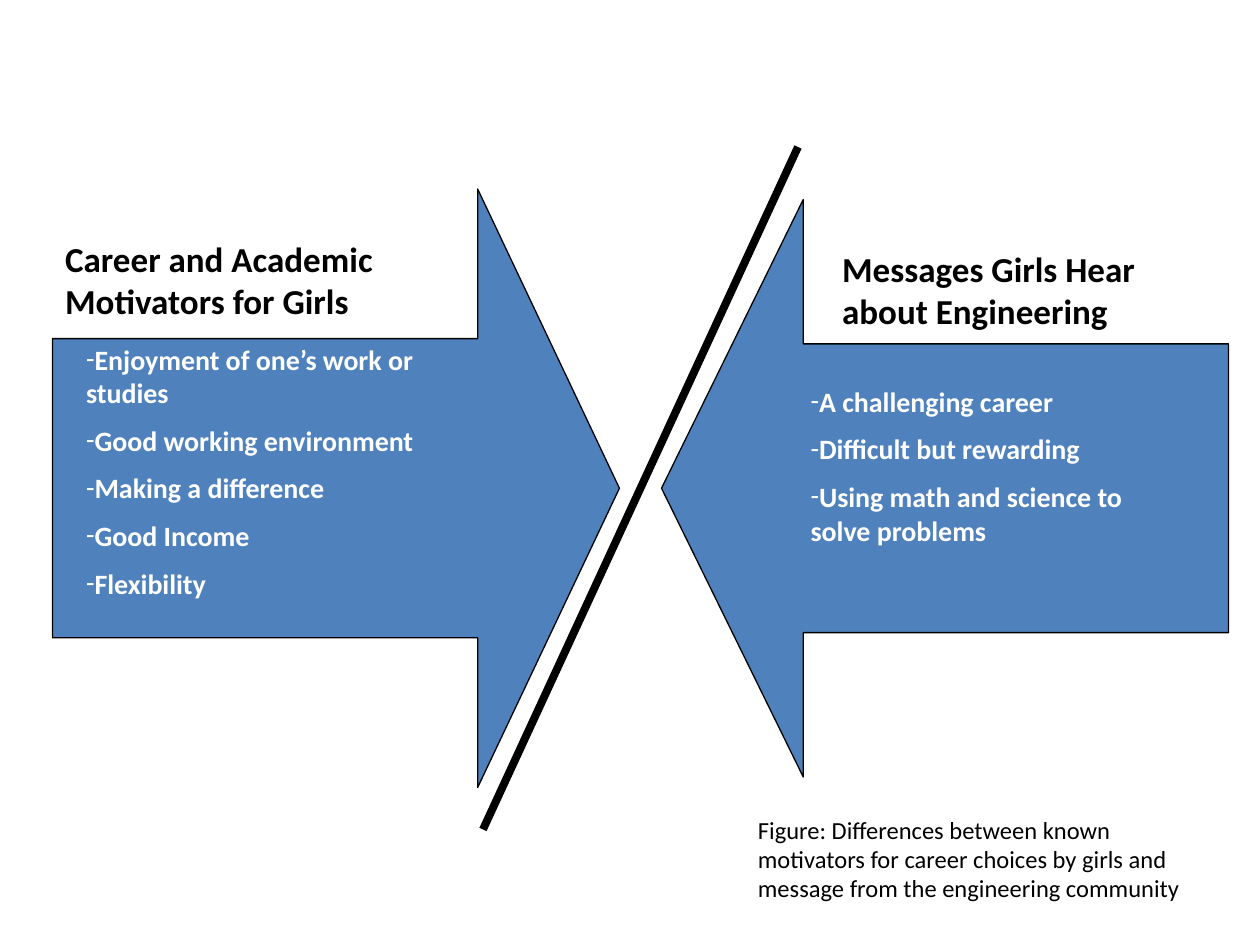
from dataclasses import dataclass

from lxml import etree
from pptx import Presentation
from pptx.dml.color import RGBColor
from pptx.enum.shapes import MSO_CONNECTOR, MSO_SHAPE
from pptx.enum.text import MSO_ANCHOR, MSO_AUTO_SIZE, PP_ALIGN
from pptx.oxml.ns import qn
from pptx.util import Inches, Pt

ARROW = MSO_SHAPE.RIGHT_ARROW
STRAIGHT = MSO_CONNECTOR.STRAIGHT
TOP = MSO_ANCHOR.TOP
LEFT = PP_ALIGN.LEFT
NO_FIT = MSO_AUTO_SIZE.NONE
COMPARISON_LAYOUT = 4

# The slide is a grid of 120 columns by 90 rows
WIDTH, HEIGHT = Inches(10), Inches(7.5)
COLUMN, ROW = WIDTH / 120, HEIGHT / 90


@dataclass(frozen=True)
class Theme:
    font: str = "Calibri"
    black: RGBColor = RGBColor(0, 0, 0)
    white: RGBColor = RGBColor(255, 255, 255)
    blue: RGBColor = RGBColor(0x4F, 0x81, 0xBD)
    heading_size: int = 20
    list_size: int = 16
    caption_size: int = 14
    outline: float = 0.75
    divider: float = 4.5


THEME = Theme()
HEADING = {"size": Pt(THEME.heading_size), "bold": True, "color": THEME.black}
LIST = {"size": Pt(THEME.list_size), "bold": True, "color": THEME.white}
CAPTION = {"size": Pt(THEME.caption_size), "bold": False, "color": THEME.black}

# Each side: arrow and text boxes as column, row, columns, rows;
# headings and lists fill the placeholders of the comparison layout
SIDES = [
    {
        "arrow": (5, 18, 54, 57), "rotation": 0,
        "heading": "Career and Academic Motivators for Girls",
        "heading_id": 1, "heading_box": (5, 22, 39, 9.25),
        "items": ["Enjoyment of one’s work or studies", "Good working environment",
                  "Making a difference", "Good Income", "Flexibility"],
        "list_id": 2, "list_box": (7, 32, 37.5, 27),
    },
    {
        "arrow": (63, 19, 54, 55), "rotation": 180,
        "heading": "Messages Girls Hear about Engineering",
        "heading_id": 3, "heading_box": (79, 23, 36, 9.25),
        "items": ["A challenging career", "Difficult but rewarding",
                  "Using math and science to solve problems"],
        "list_id": 4, "list_box": (76, 36, 37.5, 17.25),
    },
]
FIGURE_CAPTION = ("Figure: Differences between known motivators for career choices "
                  "by girls and message from the engineering community")


def grid(box):
    """Turn column, row, columns, rows into lengths."""
    return [round(value * unit) for value, unit in zip(box, (COLUMN, ROW) * 2)]


def place(shape, box):
    for name, value in zip(("left", "top", "width", "height"), grid(box)):
        setattr(shape, name, value)


def add_dash(paragraph):
    properties = paragraph._p.get_or_add_pPr()
    etree.SubElement(properties, qn("a:buFont")).set("typeface", THEME.font)
    etree.SubElement(properties, qn("a:buChar")).set("char", "-")
    properties.set("marL", "0")
    properties.set("indent", "0")


def write(shape, lines, text_format, dashed=False):
    frame = shape.text_frame
    for name, value in {"word_wrap": True, "auto_size": NO_FIT,
                        "vertical_anchor": TOP}.items():
        setattr(frame, name, value)
    for index, line in enumerate(lines):
        paragraph = frame.add_paragraph() if index else frame.paragraphs[0]
        paragraph.alignment = LEFT
        # Half a line of space between paragraphs
        paragraph.space_before = Pt(text_format["size"].pt / 2 if index else 0)
        if dashed:
            add_dash(paragraph)
        run = paragraph.add_run()
        run.text = line
        for name in ("size", "bold"):
            setattr(run.font, name, text_format[name])
        run.font.name = THEME.font
        run.font.color.rgb = text_format["color"]


def fill_placeholder(slide, number, box, lines, text_format, dashed=False):
    # Looked up by idx, as the placeholders change their order
    placeholder = next(shape for shape in slide.placeholders
                       if shape.placeholder_format.idx == number)
    place(placeholder, box)
    write(placeholder, lines, text_format, dashed)
    # Text lies in front of the arrows
    slide.shapes._spTree.append(placeholder._element)


def add_arrow(slide, box, rotation):
    arrow = slide.shapes.add_shape(ARROW, *grid(box))
    arrow.adjustments[0], arrow.adjustments[1] = 0.5, 0.25
    arrow.rotation = rotation
    arrow.shadow.inherit = False
    arrow.fill.solid()
    arrow.fill.fore_color.rgb = THEME.blue
    arrow.line.color.rgb = THEME.black
    arrow.line.width = Pt(THEME.outline)


def add_divider(slide, ends):
    divider = slide.shapes.add_connector(STRAIGHT, *grid(ends))
    divider.line.color.rgb = THEME.black
    divider.line.width = Pt(THEME.divider)
    etree.SubElement(divider._element.spPr, qn("a:effectLst"))


def add_caption(slide, box, text):
    write(slide.shapes.add_textbox(*grid(box)), [text], CAPTION)


def main():
    presentation = Presentation()
    presentation.slide_width, presentation.slide_height = WIDTH, HEIGHT
    slide = presentation.slides.add_slide(presentation.slide_layouts[COMPARISON_LAYOUT])
    title = slide.shapes.title._element
    title.getparent().remove(title)

    # Diagonal between the two opposing arrows
    add_divider(slide, (46, 79, 76, 14))
    for side in SIDES:
        add_arrow(slide, side["arrow"], side["rotation"])
        fill_placeholder(slide, side["heading_id"], side["heading_box"],
                         [side["heading"]], HEADING)
        fill_placeholder(slide, side["list_id"], side["list_box"],
                         side["items"], LIST, dashed=True)
    add_caption(slide, (71, 77, 46, 9.6), FIGURE_CAPTION)
    presentation.save("out.pptx")


if __name__ == "__main__":
    main()
